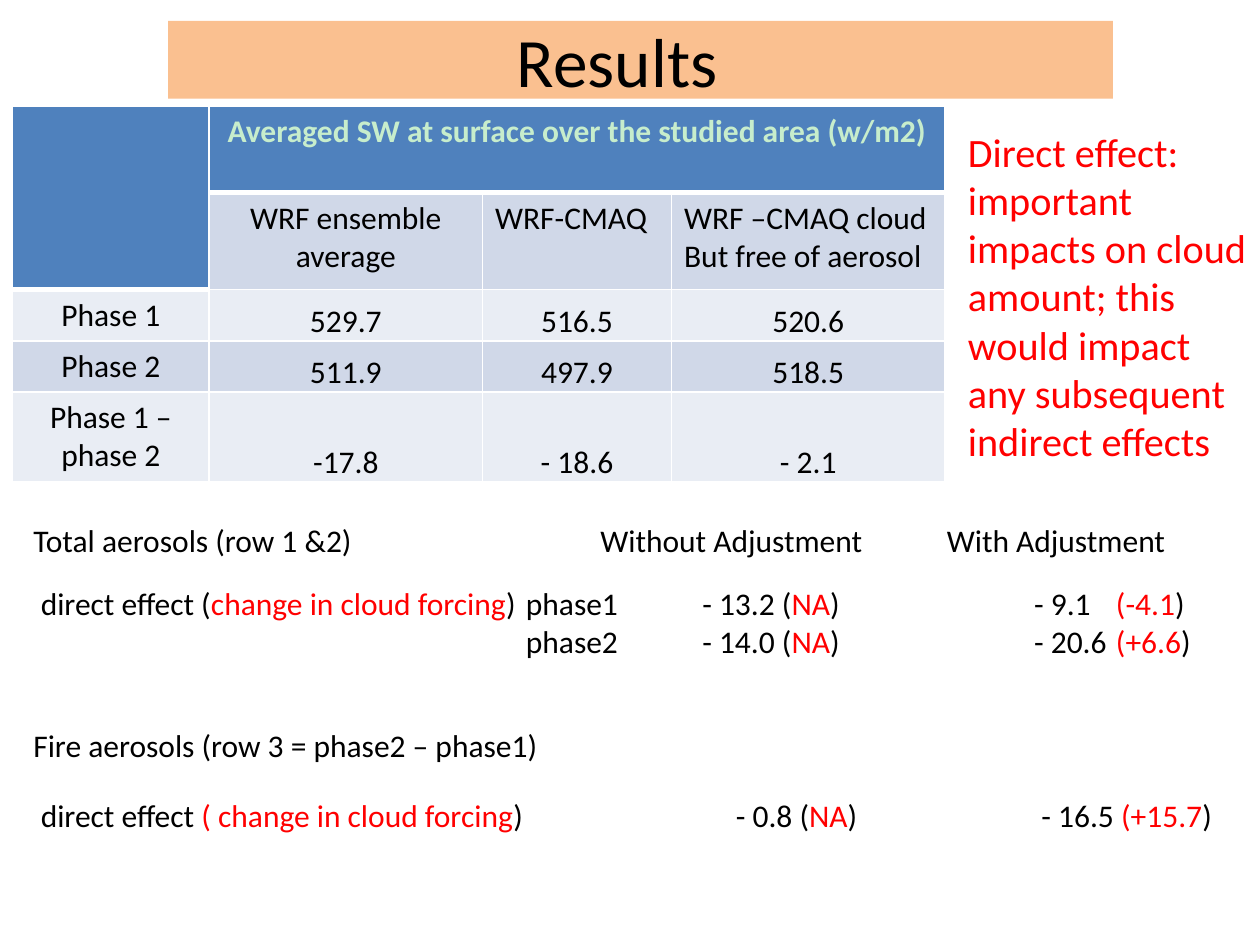
from dataclasses import dataclass
from lxml.etree import SubElement
from pptx import Presentation
from pptx.dml.color import RGBColor
from pptx.enum.text import MSO_ANCHOR as Anchor, MSO_AUTO_SIZE as AutoSize, PP_ALIGN as Align
from pptx.oxml.ns import qn
from pptx.util import Inches, Pt

COLORS = {
    "paper": "FFFFFF", "banner": "FAC090", "header": "4F81BD", "header_text": "C7EDCC",
    "band_dark": "D0D8E8", "band_light": "E9EDF4", "ink": "000000", "accent": "FF0000",
}
FONT = "Calibri"
BODY_SIZE = 18
UNIT = 1 / 12  # grid of 120 columns and 90 rows


@dataclass(frozen=True)
class Note:
    """Lines of text on the grid; parts between bars take the accent colour."""
    col: float
    row: float
    cols: float
    rows: float
    lines: tuple[str, ...]
    tabs: tuple[float, ...] = ()
    size: float = BODY_SIZE


NOTES = (
    Note(91, 11.5, 29, 33.7, ("|Direct effect: important impacts on cloud amount; "
                              "this would impact any subsequent indirect effects",), size=23),
    Note(2, 49, 37, 4.8, ("Total aerosols (row 1 &2)",)),
    Note(56, 49, 61, 4.8, ("Without Adjustment\tWith Adjustment",), (33,)),
    Note(2.7, 55, 116, 8.5, (
        "direct effect (|change in cloud forcing|)\tphase1\t- 13.2 (|NA|)\t- 9.1\t|(-4.1|)",
        "\tphase2\t- 14.0 (|NA|)\t- 20.6\t|(+6.6|)",
    ), (46.2, 63, 94.6, 102.4)),
    Note(2, 68.6, 61, 4.8, ("Fire aerosols (row 3 = phase2 – phase1)",)),
    Note(2.7, 75.2, 116, 4.8, (
        "direct effect |( change in cloud forcing|)\t- 0.8 (|NA|)\t- 16.5\t|(+15.7|)",
    ), (66.2, 95.3, 102.9)),
)

RADIATION = (
    ("", "Averaged SW at surface over the studied area (w/m2)", "", ""),
    ("", "WRF ensemble average", "WRF-CMAQ", "WRF –CMAQ cloud\nBut free of aerosol"),
    ("Phase 1", "529.7", "516.5", "520.6"),
    ("Phase 2", "511.9", "497.9", "518.5"),
    ("Phase 1 – phase 2", "-17.8", "- 18.6", "- 2.1"),
)
COLUMN_WIDTHS = (1.56, 2.17, 1.5, 2.17)
ROW_HEIGHTS = (0.69, 0.77, 0.4, 0.4, 0.71)
BELOW_HEADER = {(1, 1), (1, 2), (1, 3), (2, 0)}


def grid(units: float) -> int:
    return Inches(units * UNIT)


def rgb(name: str) -> RGBColor:
    return RGBColor.from_string(COLORS[name])


def apply(target, values: dict) -> None:
    for name, value in values.items():
        setattr(target, name, value)


def style(font, color: str, size: float = BODY_SIZE, bold: bool = False) -> None:
    apply(font, {"name": FONT, "size": Pt(size), "bold": bold})
    font.color.rgb = rgb(color)


def add_title(slide, text: str) -> None:
    title = slide.shapes.title
    apply(title, {"left": grid(16), "top": grid(2), "width": grid(90), "height": grid(7.4)})
    title.fill.solid()
    title.fill.fore_color.rgb = rgb("banner")
    frame = title.text_frame
    frame.text = text
    apply(frame, {"auto_size": AutoSize.NONE, "vertical_anchor": Anchor.MIDDLE,
                  "margin_right": Inches(0.47)})
    frame.paragraphs[0].alignment = Align.CENTER
    style(frame.paragraphs[0].runs[0].font, "ink", 39.6)


def set_tabs(paragraph, positions: tuple[float, ...]) -> None:
    if positions:
        stops = SubElement(paragraph._p.get_or_add_pPr(), qn("a:tabLst"))
        for position in positions:
            SubElement(stops, qn("a:tab"), pos=str(grid(position)), algn="l")


def add_note(slide, note: Note) -> None:
    box = slide.shapes.add_textbox(*map(grid, (note.col, note.row, note.cols, note.rows)))
    frame = box.text_frame
    apply(frame, {"word_wrap": True, "auto_size": AutoSize.SHAPE_TO_FIT_TEXT})
    for number, line in enumerate(note.lines):
        paragraph = frame.add_paragraph() if number else frame.paragraphs[0]
        set_tabs(paragraph, note.tabs)
        for part, words in enumerate(line.split("|")):
            if words:
                run = paragraph.add_run()
                run.text = words
                style(run.font, "accent" if part % 2 else "ink", note.size)


def set_borders(cell, row: int, col: int) -> None:
    heavy_top = (row, col) in BELOW_HEADER
    heavy_bottom = row == 0 or (row + 1, col) in BELOW_HEADER
    properties = cell._tc.get_or_add_tcPr()
    for side, points in (("L", 1), ("R", 1), ("T", 3 if heavy_top else 1),
                         ("B", 3 if heavy_bottom else 1)):
        line = SubElement(properties, qn(f"a:ln{side}"), w=str(Pt(points)))
        SubElement(SubElement(line, qn("a:solidFill")), qn("a:srgbClr"), val=COLORS["paper"])


def fill_cell(cell, row: int, col: int, text: str) -> None:
    header = row == 0 or (row, col) == (1, 0)
    set_borders(cell, row, col)
    cell.fill.solid()
    cell.fill.fore_color.rgb = rgb("header" if header else "band_dark" if row % 2 else "band_light")
    if row >= 2 and col >= 1:
        tight = Inches(0.01)
        apply(cell, {"vertical_anchor": Anchor.BOTTOM, "margin_left": tight,
                     "margin_right": tight, "margin_top": tight, "margin_bottom": 0})
    if text:
        cell.text = text
        for paragraph in cell.text_frame.paragraphs:
            paragraph.alignment = Align.LEFT if row == 1 and col >= 2 else Align.CENTER
            for run in paragraph.runs:
                style(run.font, "header_text" if header else "ink", bold=header)


def add_radiation_table(slide) -> None:
    table = slide.shapes.add_table(
        len(ROW_HEIGHTS), len(COLUMN_WIDTHS), Inches(0.1), Inches(0.84),
        Inches(sum(COLUMN_WIDTHS)), Inches(sum(ROW_HEIGHTS))).table
    for column, width in zip(table.columns, COLUMN_WIDTHS):
        column.width = Inches(width)
    for table_row, height in zip(table.rows, ROW_HEIGHTS):
        table_row.height = Inches(height)
    for row, texts in enumerate(RADIATION):
        for col, text in enumerate(texts):
            fill_cell(table.cell(row, col), row, col, text)
    table.cell(0, 0).merge(table.cell(1, 0))
    table.cell(0, 1).merge(table.cell(0, 3))


def main() -> None:
    deck = Presentation()
    apply(deck, {"slide_width": grid(120), "slide_height": grid(90)})
    slide = deck.slides.add_slide(deck.slide_layouts[5])
    slide.background.fill.solid()
    slide.background.fill.fore_color.rgb = rgb("paper")

    # Heading and table
    add_title(slide, "Results")
    add_radiation_table(slide)

    # Comment beside the table and effects below it
    for note in NOTES:
        add_note(slide, note)

    deck.save("out.pptx")


if __name__ == "__main__":
    main()
